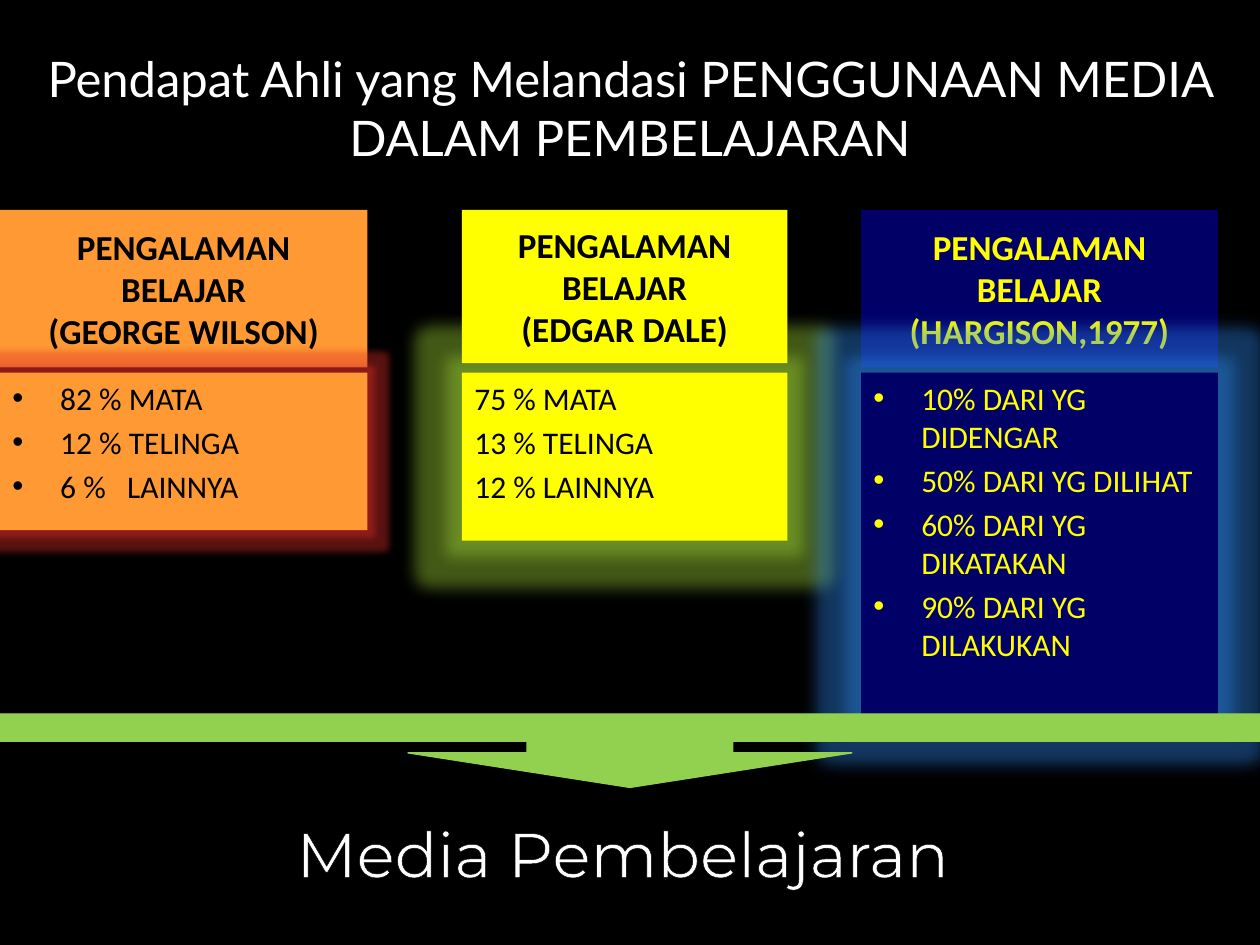
from dataclasses import dataclass

from lxml.etree import SubElement
from pptx import Presentation
from pptx.dml.color import RGBColor as RGB
from pptx.enum.shapes import MSO_SHAPE as SHAPE
from pptx.enum.text import MSO_ANCHOR as ANCHOR, MSO_AUTO_SIZE as AUTO, PP_ALIGN as ALIGN
from pptx.oxml.ns import qn
from pptx.util import Inches, Pt

CELL = Inches(1) / 12  # the slide is a grid of 120 columns by 90 rows
HEAD_ROW, BODY_ROW = 20, 35.5


@dataclass(frozen=True)
class Theme:
    black: str = "000000"
    white: str = "FFFFFF"
    orange: str = "FF9933"
    yellow: str = "FFFF00"
    navy: str = "000066"
    green: str = "92D050"
    red_glow: str = "DF2E28"
    green_glow: str = "A5DC37"
    blue_glow: str = "2D87ED"
    body_font: str = "Calibri"
    title_font: str = "Lato"
    result_font: str = "Montserrat"
    item: int = 18
    head: int = 20
    title: int = 28
    result: int = 36


T = Theme()


@dataclass(frozen=True)
class Box:
    col: float
    row: float
    cols: float
    rows: float

    def emu(self) -> list[int]:
        return [round(n * CELL) for n in (self.col, self.row, self.cols, self.rows)]


@dataclass(frozen=True)
class Opinion:
    expert: str
    items: tuple[str, ...]
    col: float
    cols: float
    head_rows: float
    body_rows: float
    fill: str
    ink: str
    glow: str
    glow_pt: int
    bullets: bool = True
    head_on_top: bool = False


OPINIONS = (
    Opinion("(GEORGE WILSON)", ("82 % MATA", "12 % TELINGA", "6 %   LAINNYA"),
            0, 35, 15, 15, T.orange, T.black, T.red_glow, 8),
    Opinion("(EDGAR DALE)", ("75 % MATA", "13 % TELINGA", "12 % LAINNYA"),
            44, 31, 14.6, 16, T.yellow, T.black, T.green_glow, 18,
            bullets=False, head_on_top=True),
    Opinion("(HARGISON,1977)",
            ("10% DARI YG DIDENGAR", "50% DARI YG DILIHAT",
             "60% DARI YG DIKATAKAN", "90% DARI YG DILAKUKAN"),
            82, 34, 15, 33, T.navy, T.yellow, T.blue_glow, 18),
)


def add_block(s, kind: SHAPE, box: Box, fill: str):
    sp = s.shapes.add_shape(kind, *box.emu())
    sp.shadow.inherit = False
    sp.fill.solid()
    sp.fill.fore_color.rgb = RGB.from_string(fill)
    sp.line.fill.background()
    return sp


def write(sp, text: str, font: str, size: int, color: str, align: ALIGN,
          anchor: ANCHOR = ANCHOR.TOP, bold: bool = False, wrap: bool = True):
    tf = sp.text_frame
    tf.word_wrap = wrap
    tf.vertical_anchor = anchor
    tf.text = text
    for p in tf.paragraphs:
        p.alignment = align
        for r in p.runs:
            r.font.name, r.font.size, r.font.bold = font, Pt(size), bold
            r.font.color.rgb = RGB.from_string(color)
    return tf


def add_glow(sp, color: str, points: int) -> None:
    effects = sp._element.spPr.find(qn("a:effectLst"))
    glow = SubElement(effects, qn("a:glow"), rad=str(Pt(points)))
    clr = SubElement(glow, qn("a:srgbClr"), val=color)
    SubElement(clr, qn("a:alpha"), val="40000")


def hang(p, bullet: bool) -> None:
    """Give a paragraph a hanging indent, with or without a bullet."""
    pPr = p._p.get_or_add_pPr()
    indent = Inches(0.38)
    pPr.set("marL", str(indent))
    pPr.set("indent", str(-indent if bullet else -indent))
    if bullet:
        SubElement(pPr, qn("a:buFont"), typeface="Arial")
        SubElement(pPr, qn("a:buChar"), char="•")
    else:
        SubElement(pPr, qn("a:buNone"))


def add_head(s, o: Opinion) -> None:
    sp = add_block(s, SHAPE.RECTANGLE, Box(o.col, HEAD_ROW, o.cols, o.head_rows), o.fill)
    write(sp, f"PENGALAMAN BELAJAR\v{o.expert}", T.body_font, T.head, o.ink,
          ALIGN.CENTER, ANCHOR.MIDDLE, bold=True)


def add_body(s, o: Opinion) -> None:
    sp = add_block(s, SHAPE.RECTANGLE, Box(o.col, BODY_ROW, o.cols, o.body_rows), o.fill)
    add_glow(sp, o.glow, o.glow_pt)
    tf = write(sp, "\n".join(o.items), T.body_font, T.item, o.ink, ALIGN.LEFT)
    for i, p in enumerate(tf.paragraphs):
        p.space_before = Pt(0.2 * T.item if i else 0)
        hang(p, o.bullets)


def add_title(s) -> None:
    sp = add_block(s, SHAPE.RECTANGLE, Box(2, 4, 116, 12.4), T.black)
    tf = write(sp, "Pendapat Ahli yang Melandasi PENGGUNAAN MEDIA DALAM PEMBELAJARAN",
               T.title_font, T.title, T.white, ALIGN.CENTER)
    tf.auto_size = AUTO.SHAPE_TO_FIT_TEXT


def add_arrow(s) -> None:
    sp = add_block(s, SHAPE.DOWN_ARROW_CALLOUT, Box(0, 68, 120, 7), T.green)
    for i, value in enumerate((2.8, 3.02, 0.47, 0.37)):
        sp.adjustments[i] = value
    sp.line.color.rgb = RGB.from_string(T.green)
    sp.line.width = Pt(0.75)


def add_result(s) -> None:
    sp = s.shapes.add_textbox(*Box(26, 77, 66.6, 8.5).emu())
    tf = write(sp, "Media Pembelajaran", T.result_font, T.result, T.white,
               ALIGN.CENTER, wrap=False)
    rPr = tf.paragraphs[0].runs[0]._r.get_or_add_rPr()
    ln = rPr.makeelement(qn("a:ln"), {"w": str(Pt(0.75))})
    SubElement(SubElement(ln, qn("a:solidFill")), qn("a:srgbClr"), val=T.black)
    rPr.insert(0, ln)


def main() -> None:
    prs = Presentation()
    prs.slide_width, prs.slide_height = round(120 * CELL), round(90 * CELL)
    s = prs.slides.add_slide(prs.slide_layouts[6])
    s.background.fill.solid()
    s.background.fill.fore_color.rgb = RGB.from_string(T.black)
    add_title(s)
    for o in OPINIONS:
        for draw in (add_body, add_head) if o.head_on_top else (add_head, add_body):
            draw(s, o)
    add_arrow(s)
    add_result(s)
    prs.save("out.pptx")


if __name__ == "__main__":
    main()
